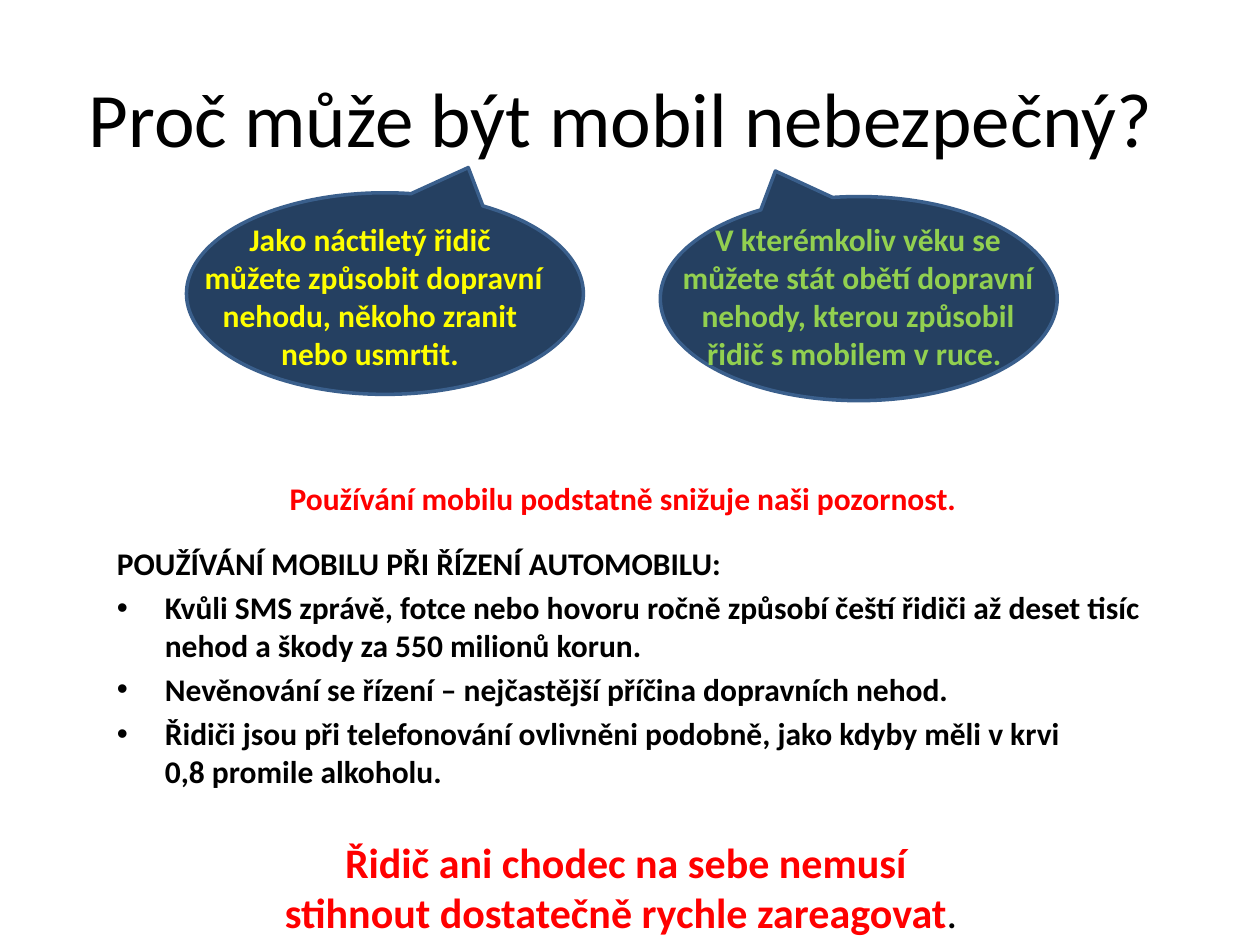
from lxml import etree
from pptx import Presentation
from pptx.dml.color import RGBColor
from pptx.enum.shapes import MSO_SHAPE
from pptx.enum.text import MSO_ANCHOR, PP_ALIGN
from pptx.oxml.ns import qn
from pptx.util import Inches, Pt

CENTER, LEFT = PP_ALIGN.CENTER, PP_ALIGN.LEFT
MIDDLE = MSO_ANCHOR.MIDDLE
BUBBLE = MSO_SHAPE.OVAL_CALLOUT

FONT = "Calibri"
BLACK = RGBColor(0x00, 0x00, 0x00)
RED = RGBColor(0xFF, 0x00, 0x00)
YELLOW = RGBColor(0xFF, 0xFF, 0x00)
GREEN = RGBColor(0x92, 0xD0, 0x50)
NAVY = RGBColor(0x25, 0x40, 0x61)
OUTLINE = RGBColor(0x3A, 0x5F, 0x8C)

HEADING = "POUŽÍVÁNÍ MOBILU PŘI ŘÍZENÍ AUTOMOBILU:"
FACTS = [
    "Kvůli SMS zprávě, fotce nebo hovoru ročně způsobí čeští řidiči až deset tisíc "
    "nehod a škody za 550 milionů korun.",
    "Nevěnování se řízení – nejčastější příčina dopravních nehod.",
    "Řidiči jsou při telefonování ovlivněni podobně, jako kdyby měli v krvi "
    "\v0,8 promile alkoholu.",
]


def style(paragraph, size, color, bold=True, align=LEFT):
    paragraph.alignment = align
    font = paragraph.font
    font.name, font.size, font.bold = FONT, Pt(size), bold
    font.color.rgb = color


def add_title(slide, text):
    title = slide.shapes.title
    title.left, title.top = Inches(0.5), Inches(0.3)
    title.width, title.height = Inches(9), Inches(1.25)
    title.text_frame.vertical_anchor = MIDDLE
    title.text_frame.text = text
    style(title.text_frame.paragraphs[0], 44, BLACK, bold=False, align=CENTER)


def add_bubble(slide, left, top, height, tail_x):
    """Upside-down callout; tail_x is the tail's offset before the half turn."""
    bubble = slide.shapes.add_shape(
        BUBBLE, Inches(left), Inches(top), Inches(3.15), Inches(height))
    bubble.rotation = 180
    bubble.adjustments[0], bubble.adjustments[1] = tail_x, 0.625
    bubble.shadow.inherit = False
    bubble.fill.solid()
    bubble.fill.fore_color.rgb = NAVY
    bubble.line.color.rgb = OUTLINE
    bubble.line.width = Pt(2)


def add_text(slide, box, text, color, size=18, align=CENTER):
    frame = slide.shapes.add_textbox(*map(Inches, box)).text_frame
    frame.word_wrap = True
    frame.text = text
    style(frame.paragraphs[0], size, color, align=align)
    return frame


def add_bullet(paragraph):
    properties = paragraph._p.get_or_add_pPr()
    properties.set("marL", str(Inches(0.38)))
    properties.set("indent", str(Inches(-0.38)))
    etree.SubElement(properties, qn("a:buFont")).set("typeface", "Arial")
    etree.SubElement(properties, qn("a:buChar")).set("char", "•")


def add_facts(slide):
    frame = add_text(slide, (0.83, 4.27, 8.35, 2.44), HEADING, BLACK, align=LEFT)
    frame.paragraphs[0].space_before = Pt(3.6)
    for fact in FACTS:
        paragraph = frame.add_paragraph()
        paragraph.text = fact
        paragraph.space_before = Pt(3.6)
        add_bullet(paragraph)
        style(paragraph, 18, BLACK)


def add_conclusion(slide):
    frame = add_text(
        slide, (0.87, 6.59, 8.27, 0.91),
        "Řidič ani chodec na sebe nemusí \vstihnout dostatečně rychle zareagovat",
        RED, size=24)
    period = frame.paragraphs[0].add_run()
    period.text = ".  "
    period.font.bold = False
    period.font.color.rgb = BLACK


def main():
    prs = Presentation()
    prs.slide_width, prs.slide_height = Inches(10), Inches(7.5)
    slide = prs.slides.add_slide(prs.slide_layouts[5])

    add_title(slide, "Proč může být mobil nebezpečný? ")
    add_bubble(slide, 1.48, 1.53, 1.6, tail_x=-0.21)
    add_bubble(slide, 5.24, 1.56, 1.62, tail_x=0.21)
    add_text(slide, (1.22, 1.7, 3.49, 1.31),
             "Jako náctiletý řidič \vmůžete způsobit dopravní nehodu, "
             "někoho zranit \vnebo usmrtit. ", YELLOW)
    add_text(slide, (5.24, 1.7, 3.14, 1.31),
             "V kterémkoliv věku se můžete stát obětí dopravní nehody, "
             "kterou způsobil řidič s mobilem v ruce. ", GREEN)
    add_text(slide, (2.2, 3.75, 5.59, 0.4),
             "Používání mobilu podstatně snižuje naši pozornost.", RED, align=LEFT)
    add_facts(slide)
    add_conclusion(slide)

    prs.save("out.pptx")


if __name__ == "__main__":
    main()
